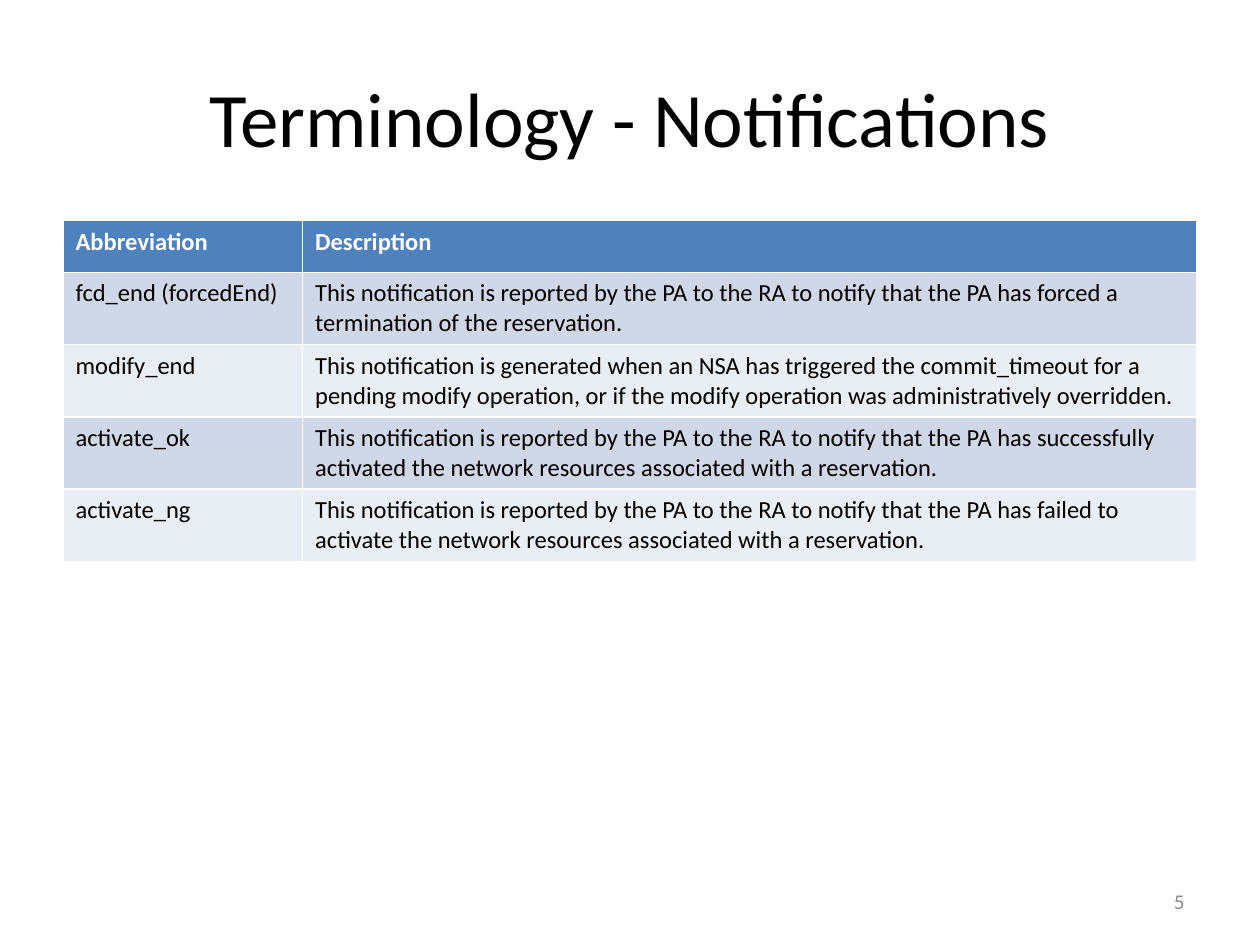
import dataclasses
import pptx
import pptx.dml.color
import pptx.enum.text
import pptx.util

Cm = pptx.util.Cm
Align = pptx.enum.text.PP_ALIGN
Anchor = pptx.enum.text.MSO_ANCHOR


@dataclasses.dataclass(frozen=True)
class Theme:
    font: str = "Calibri"
    ink: str = "000000"
    white: str = "FFFFFF"
    gray: str = "8C8C8C"
    head: str = "4F81BD"
    bands: tuple = ("D0D8E8", "E9EDF4")
    title: int = 44
    body: int = 14
    small: int = 12


class Deck:
    """Build slides in one theme."""

    def __init__(self, theme):
        self.theme = theme
        self.file = pptx.Presentation()
        self.file.slide_width = Cm(25.4)
        self.file.slide_height = Cm(19.05)
        self.slide = None

    def put(self, item, values):
        for name, value in values.items():
            setattr(item, name, value)

    def place(self, shape, box):
        names = ("left", "top", "width", "height")
        self.put(shape, dict(zip(names, map(Cm, box))))

    def label(self, frame, text, size, color, bold=False, align=Align.LEFT):
        frame.text = text
        para = frame.paragraphs[0]
        para.alignment = align
        font = para.runs[0].font
        self.put(font, {"name": self.theme.font, "size": pptx.util.Pt(size), "bold": bold})
        font.color.rgb = pptx.dml.color.RGBColor.from_string(color)

    def title(self, text, box):
        self.slide = self.file.slides.add_slide(self.file.slide_layouts[5])
        shape = self.slide.shapes.title
        self.place(shape, box)
        shape.text_frame.vertical_anchor = Anchor.MIDDLE
        self.label(shape.text_frame, text, self.theme.title, self.theme.ink, align=Align.CENTER)

    def table(self, rows, spot, widths, heights):
        size = sum(widths), sum(heights)
        grid = self.slide.shapes.add_table(len(rows), len(widths), *map(Cm, spot + size)).table
        for col, width in zip(grid.columns, widths):
            col.width = Cm(width)
        for num, (row, height) in enumerate(zip(rows, heights)):
            grid.rows[num].height = Cm(height)
            head = num == 0
            fill = self.theme.head if head else self.theme.bands[(num - 1) % 2]
            ink = self.theme.white if head else self.theme.ink
            for cell, text in zip(grid.rows[num].cells, row):
                cell.fill.solid()
                cell.fill.fore_color.rgb = pptx.dml.color.RGBColor.from_string(fill)
                self.label(cell.text_frame, text, self.theme.body, ink, head)

    def number(self, text, box):
        frame = self.slide.shapes.add_textbox(*map(Cm, box)).text_frame
        self.put(frame, {"word_wrap": True, "vertical_anchor": Anchor.MIDDLE})
        self.label(frame, text, self.theme.small, self.theme.gray, align=Align.RIGHT)


def main():
    report = "This notification is reported by the PA to the RA to notify that the PA has "
    rows = [
        ("Abbreviation", "Description"),
        ("fcd_end (forcedEnd)", report + "forced a termination of the reservation."),
        ("modify_end", "This notification is generated when an NSA has triggered the "
         "commit_timeout for a pending modify operation, or if the modify operation "
         "was administratively overridden."),
        ("activate_ok", report + "successfully activated the network resources "
         "associated with a reservation."),
        ("activate_ng", report + "failed to activate the network resources "
         "associated with a reservation."),
    ]
    deck = Deck(Theme())
    deck.title("Terminology - Notifications", (1.27, 0.76, 22.86, 3.18))
    deck.table(rows, (1.27, 4.45), (4.83, 18.03), (1.04,) + (1.44,) * 4)
    deck.number("5", (18.2, 17.65, 5.93, 1.02))
    deck.file.save("out.pptx")


if __name__ == "__main__":
    main()
